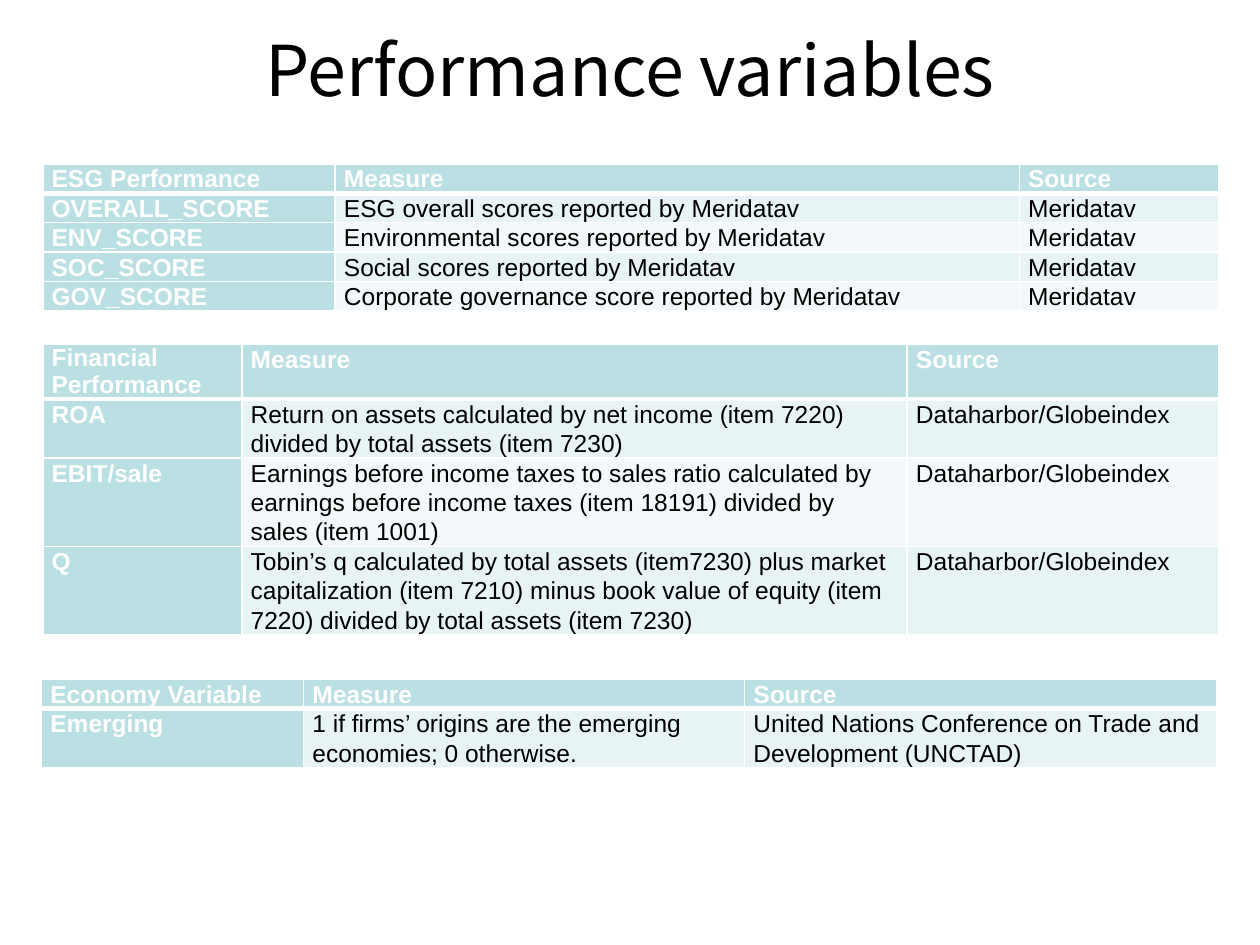
from dataclasses import dataclass

from lxml.etree import SubElement
from pptx import Presentation
from pptx.dml.color import RGBColor
from pptx.enum.text import MSO_ANCHOR, PP_ALIGN
from pptx.oxml.ns import qn
from pptx.util import Inches, Pt


@dataclass(frozen=True)
class Theme:
    """Colours, fonts and type sizes of the slide."""
    white: str = "FFFFFF"
    black: str = "000000"
    header: str = "BBE0E3"
    bands: tuple = ("E7F3F4", "F3F9FA")
    title_font: str = "Noto Sans CJK KR"
    body_font: str = "Arial"
    title_size: int = 40
    body_size: int = 14
    thin_line: int = 1
    thick_line: int = 3
    line_spacing: float = 1.07


THEME = Theme()

ESG_ROWS = [
    ("ESG Performance", "Measure", "Source"),
    ("OVERALL_SCORE", "ESG overall scores reported by Meridatav", "Meridatav"),
    ("ENV_SCORE", "Environmental scores reported by Meridatav", "Meridatav"),
    ("SOC_SCORE", "Social scores reported by Meridatav", "Meridatav"),
    ("GOV_SCORE", "Corporate governance score reported by Meridatav", "Meridatav"),
]
FINANCIAL_ROWS = [
    ("Financial Performance", "Measure", "Source"),
    ("ROA",
     "Return on assets calculated by net income (item 7220) "
     "divided by total assets (item 7230)",
     "Dataharbor/Globeindex"),
    ("EBIT/sale",
     "Earnings before income taxes to sales ratio calculated by earnings "
     "before income taxes (item 18191) divided by sales (item 1001)",
     "Dataharbor/Globeindex"),
    ("Q",
     "Tobin’s q calculated by total assets (item7230) plus market "
     "capitalization (item 7210) minus book value of equity (item 7220) "
     "divided by total assets (item 7230)",
     "Dataharbor/Globeindex"),
]
ECONOMY_ROWS = [
    ("Economy Variable", "Measure", "Source"),
    ("Emerging",
     "1 if firms’ origins are the emerging economies; 0 otherwise.",
     "United Nations Conference on Trade and Development (UNCTAD)"),
]


def style_font(font, name, size, color, bold=False):
    """Apply a typeface, size, colour and weight."""
    font.name = name
    font.size = Pt(size)
    font.bold = bold
    font.color.rgb = RGBColor.from_string(color)


def add_borders(cell, top, bottom):
    """Draw white borders, with the given top and bottom widths."""
    properties = cell._tc.get_or_add_tcPr()
    widths = {"L": THEME.thin_line, "R": THEME.thin_line, "T": top, "B": bottom}
    for side, width in widths.items():
        line = SubElement(properties, qn(f"a:ln{side}"), w=str(Pt(width)))
        fill = SubElement(line, qn("a:solidFill"))
        SubElement(fill, qn("a:srgbClr"), val=THEME.white)


def fill_cell(cell, text, row, column, spacing):
    """Write and format one cell according to its place in the table."""
    is_heading = row == 0 or column == 0
    cell.margin_left = cell.margin_right = Inches(0.07)
    cell.margin_top = cell.margin_bottom = 0
    add_borders(
        cell,
        top=THEME.thick_line if row == 1 else THEME.thin_line,
        bottom=THEME.thick_line if row == 0 else THEME.thin_line,
    )
    color = THEME.header if is_heading else THEME.bands[(row - 1) % 2]
    cell.fill.solid()
    cell.fill.fore_color.rgb = RGBColor.from_string(color)
    cell.text = text
    paragraph = cell.text_frame.paragraphs[0]
    paragraph.line_spacing = spacing
    style_font(paragraph.font, THEME.body_font, THEME.body_size,
               THEME.white if is_heading else THEME.black, is_heading)


def add_variable_table(slide, left, top, widths, rows, corner_spacing=THEME.line_spacing):
    """Place a table of variables with its top left corner at the given point."""
    row_height = Inches(0.19)
    table = slide.shapes.add_table(
        len(rows), len(widths), Inches(left), Inches(top),
        Inches(sum(widths)), row_height * len(rows),
    ).table
    table.first_col = True
    for column, width in zip(table.columns, widths):
        column.width = Inches(width)
    for row, texts in enumerate(rows):
        table.rows[row].height = row_height
        for column, text in enumerate(texts):
            spacing = corner_spacing if row == column == 0 else THEME.line_spacing
            fill_cell(table.cell(row, column), text, row, column, spacing)


def place_title(slide, left, top, width, height):
    """Move and format the title placeholder."""
    title = slide.shapes.title
    title.left, title.top = Inches(left), Inches(top)
    title.width, title.height = Inches(width), Inches(height)
    title.text_frame.text = "Performance variables"
    title.text_frame.vertical_anchor = MSO_ANCHOR.MIDDLE
    paragraph = title.text_frame.paragraphs[0]
    paragraph.alignment = PP_ALIGN.CENTER
    style_font(paragraph.font, THEME.title_font, THEME.title_size, THEME.black)


def main():
    """Build and save the presentation."""
    presentation = Presentation()
    presentation.slide_width = Inches(10)
    presentation.slide_height = Inches(7.5)
    slide = presentation.slides.add_slide(presentation.slide_layouts[5])
    place_title(slide, 0.75, 0.08, 8.5, 0.93)
    add_variable_table(slide, 0.34, 1.3, (2.32, 5.43, 1.58), ESG_ROWS)
    add_variable_table(slide, 0.34, 2.73, (1.58, 5.28, 2.47), FINANCIAL_ROWS,
                       corner_spacing=1.0)
    add_variable_table(slide, 0.33, 5.39, (2.08, 3.5, 3.75), ECONOMY_ROWS)
    presentation.save("out.pptx")


if __name__ == "__main__":
    main()
